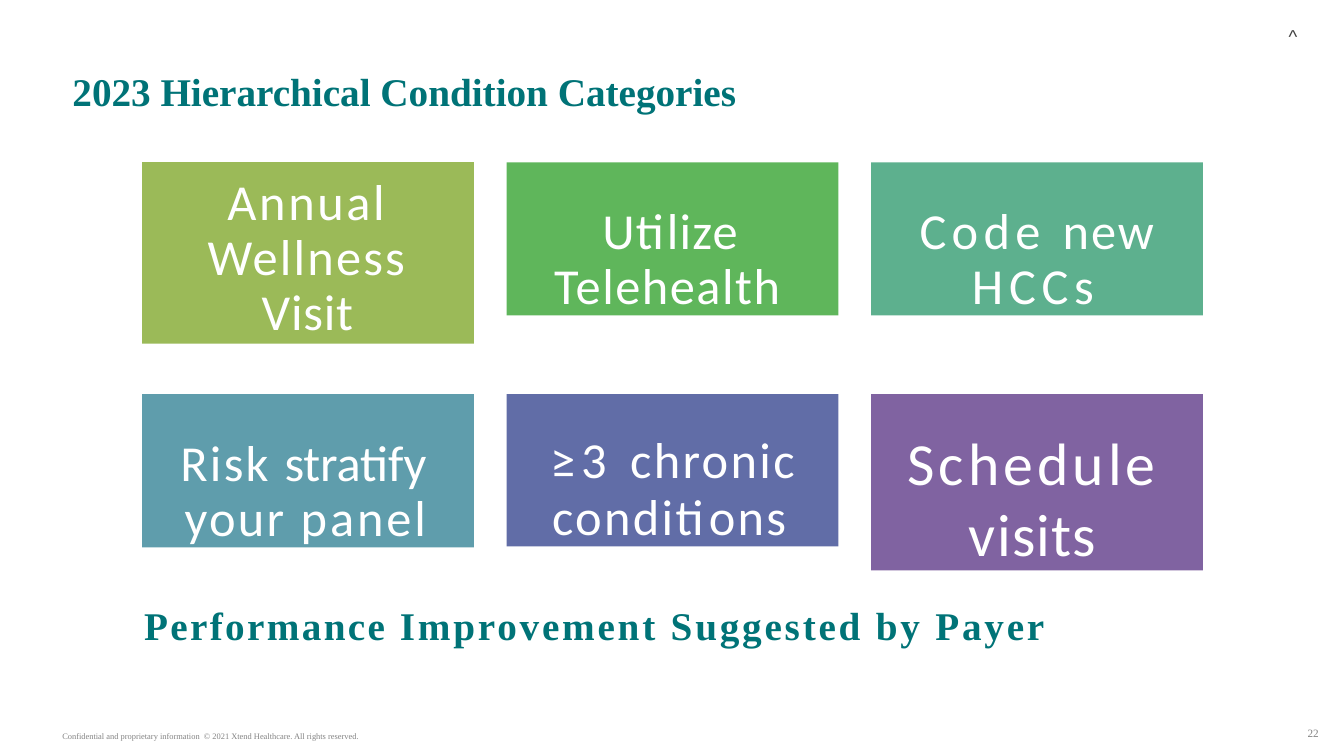
from dataclasses import dataclass

from pptx import Presentation
from pptx.dml.color import RGBColor
from pptx.enum.shapes import MSO_SHAPE
from pptx.enum.text import MSO_ANCHOR, PP_ALIGN
from pptx.util import Inches, Pt

RECTANGLE = MSO_SHAPE.RECTANGLE
TOP = MSO_ANCHOR.TOP
LEFT, CENTER, RIGHT = PP_ALIGN.LEFT, PP_ALIGN.CENTER, PP_ALIGN.RIGHT


@dataclass(frozen=True)
class Theme:
    teal: str = "007377"
    white: str = "FFFFFF"
    gray: str = "838383"
    dark: str = "414141"
    olive: str = "9BBA58"
    green: str = "5FB65B"
    mint: str = "5DB08E"
    steel: str = "5F9DAC"
    indigo: str = "616DA7"
    purple: str = "8063A1"
    serif: str = "Times New Roman"
    sans: str = "Calibri"
    symbol: str = "Arial"
    heading_size: float = 28
    tile_size: float = 36
    large_tile_size: float = 42.7
    mark_size: float = 13.3
    number_size: float = 8
    footer_size: float = 6


theme = Theme()


def write_text(shape, paragraphs, *, size, font, color, bold=False, align=LEFT,
               insets=(0.1, 0.05, 0.1, 0.05), indents=((0, 0),), right=0,
               line_spacing=None, wrap=True):
    """Each paragraph is a list of (text, letter spacing in points) runs."""
    frame = shape.text_frame
    frame.word_wrap = wrap
    frame.vertical_anchor = TOP
    (frame.margin_left, frame.margin_top,
     frame.margin_right, frame.margin_bottom) = [Inches(inset) for inset in insets]
    for index, (runs, (margin, first_line)) in enumerate(zip(paragraphs, indents)):
        paragraph = frame.paragraphs[0] if index == 0 else frame.add_paragraph()
        paragraph.alignment = align
        if line_spacing:
            paragraph.line_spacing = line_spacing
        properties = paragraph._p.get_or_add_pPr()
        for name, value in (("marL", margin), ("marR", right), ("indent", first_line)):
            properties.set(name, str(Inches(value)))
        for text, spacing in runs:
            run = paragraph.add_run()
            run.text = text
            run.font.size = Pt(size)
            run.font.name = font
            run.font.bold = bold
            run.font.color.rgb = RGBColor.from_string(color)
            if spacing:
                run._r.get_or_add_rPr().set("spc", str(round(spacing * 100)))


presentation = Presentation()
presentation.slide_width = Inches(13.33)
presentation.slide_height = Inches(7.5)
slide = presentation.slides.add_slide(presentation.slide_layouts[6])

# Headings, footer, page number and corner mark
heading = dict(size=theme.heading_size, font=theme.serif, color=theme.teal, bold=True)
small = dict(font=theme.serif, color=theme.gray)
labels = [
    ((0.62, 0.62, 8.02, 0.57), [("2023 Hierarchical Condition Categories", 0)], heading),
    ((1.41, 5.94, 10.13, 0.49),
     [("Performance ", 1.7), ("Improvement Suggested by Payer", 2)],
     dict(heading, insets=(0, 0.02, 0, 0), indents=[(0.02, 0)])),
    ((0.52, 7.2, 3.16, 0.2),
     [("Confidential and proprietary information  © 2021 Xtend Healthcare. "
       "All rights reserved.", 0)],
     dict(small, size=theme.footer_size, wrap=False)),
    ((12.32, 7.16, 0.76, 0.27), [("22", 0)],
     dict(small, size=theme.number_size, align=RIGHT, insets=(0, 0.05, 0, 0.05))),
    ((12.76, 0.23, 0.12, 0.24), [("^", 0)],
     dict(size=theme.mark_size, font=theme.symbol, color=theme.dark,
          insets=(0, 0.02, 0, 0), indents=[(0.02, 0)])),
]
for box, runs, text_format in labels:
    text_box = slide.shapes.add_textbox(*[Inches(length) for length in box])
    write_text(text_box, [runs], **text_format)

# Tiles: fill, height, top inset, paragraphs, format
tiles = [
    (theme.olive, 1.8, 0.14,
     [[("Annual ", 1.9), ("Wellness ", 1.6), ("Visit", 0.6)]],
     dict(align=CENTER, indents=[(0.63, 0)], right=0.64, line_spacing=0.91)),
    (theme.green, 1.52, 0.42,
     [[("Utilize ", 0.9), ("Telehealth", 1.1)]],
     dict(indents=[(0.47, 0.48)], line_spacing=Pt(39.3))),
    (theme.mint, 1.52, 0.42,
     [[("Code ", 3.8), ("new ", 1.5), ("HCCs", 4.1)]],
     dict(indents=[(1, -0.52)], line_spacing=Pt(39.3))),
    (theme.steel, 1.52, 0.42,
     [[("Risk ", 1.6), ("stratify ", -0.1), ("your ", 1.7), ("panel", 2.1)]],
     dict(indents=[(0.42, -0.04)], line_spacing=Pt(39.5))),
    (theme.indigo, 1.51, 0.36,
     [[("≥3 ", 4.3), ("chronic", 1.7)], [("conditions", 1.7)]],
     dict(indents=[(0.43, 0), (0.45, 0)], line_spacing=Pt(41.3))),
    (theme.purple, 1.75, 0.31,
     [[("Schedule ", 2.9), ("visits", 0.9)]],
     dict(indents=[(0.97, -0.61)], size=theme.large_tile_size)),
]
tile_defaults = dict(size=theme.tile_size, font=theme.sans, color=theme.white)
for index, (fill, height, top_inset, paragraphs, text_format) in enumerate(tiles):
    row, column = divmod(index, 3)
    tile = slide.shapes.add_shape(
        RECTANGLE, Inches(1.41 + 3.615 * column), Inches(1.61 + 2.3 * row),
        Inches(3.29), Inches(height))
    tile.shadow.inherit = False
    tile.fill.solid()
    tile.fill.fore_color.rgb = RGBColor.from_string(fill)
    tile.line.fill.background()
    write_text(tile, paragraphs, insets=(0, top_inset, 0, 0),
               **{**tile_defaults, **text_format})

presentation.save("out.pptx")
